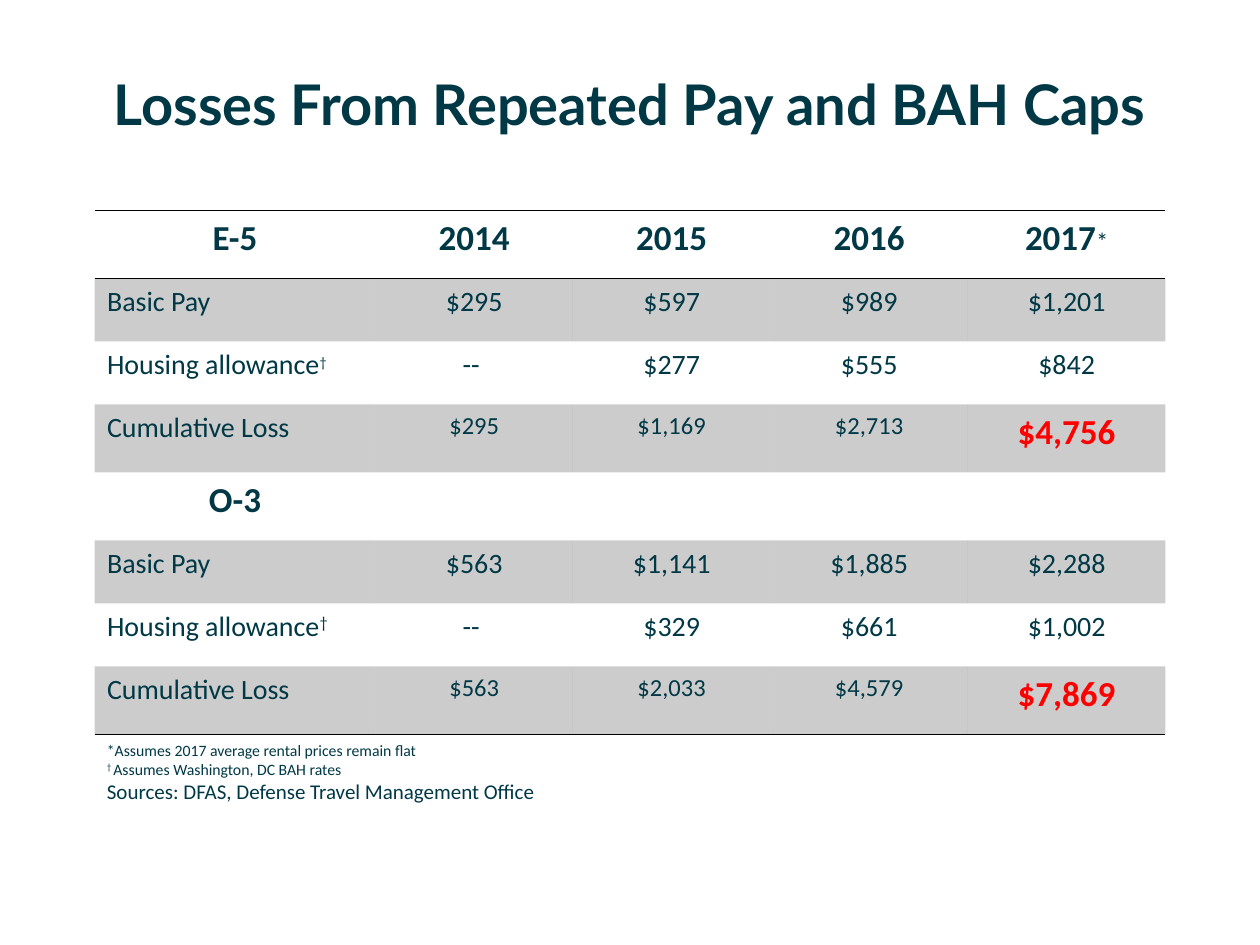
from dataclasses import dataclass

from pptx import Presentation
from pptx.dml.color import RGBColor
from pptx.enum.text import MSO_ANCHOR, PP_ALIGN
from pptx.oxml.ns import qn
from pptx.util import Inches, Pt
from lxml.etree import SubElement


@dataclass(frozen=True)
class Theme:
    title_font: str = "Lato"
    body_font: str = "Calibri"
    ink: str = "003846"
    loss: str = "FF0000"
    rule: str = "000000"
    band_opacity: int = 20
    title: int = 32
    heading: int = 20
    body: int = 16
    small: int = 14
    source: int = 12
    note: int = 9


THEME = Theme()
LEFT, WIDTH = 0.75, 8.5
LABEL_WIDTH = 2.23
TALL_ROW, ROW = 0.54, 0.5
NO_STYLE = "{2D5ABB26-0587-4C30-8999-92F81FD0307C}"

YEARS = ["2014", "2015", "2016", "2017"]
# Grade, dagger size, then pay, housing and cumulative losses by year
GRADES = [
    ("E-5", THEME.small,
     ["$295", "$597", "$989", "$1,201"],
     ["-- ", "$277", "$555", "$842"],
     ["$295", "$1,169", "$2,713", "$4,756"]),
    ("O-3", THEME.body,
     ["$563", "$1,141", "$1,885", "$2,288"],
     ["-- ", "$329", "$661", "$1,002"],
     ["$563", "$2,033", "$4,579", "$7,869"]),
]


def add_run(paragraph, text, size, bold=False, color=THEME.ink,
            font=THEME.body_font, raised=False):
    run = paragraph.add_run()
    run.text = text
    run.font.size = Pt(size)
    run.font.bold = bold
    run.font.name = font
    run.font.color.rgb = RGBColor.from_string(color)
    if raised:
        run.font._element.set("baseline", "30000")


def add_text_box(slide, top, height):
    frame = slide.shapes.add_textbox(
        Inches(LEFT), Inches(top), Inches(WIDTH), Inches(height)).text_frame
    frame.word_wrap = True
    return frame


def shade(cell):
    cell.fill.solid()
    cell.fill.fore_color.rgb = RGBColor.from_string(THEME.rule)
    color = cell._tc.tcPr.find(".//" + qn("a:srgbClr"))
    SubElement(color, qn("a:alpha"), val=str(THEME.band_opacity * 1000))


def add_rules(cell, *edges):
    properties = cell._tc.get_or_add_tcPr()
    for position, edge in enumerate(edges):
        line = SubElement(properties, qn(f"a:{edge}"), w=str(Pt(1)))
        fill = SubElement(line, qn("a:solidFill"))
        SubElement(fill, qn("a:srgbClr"), val=THEME.rule)
        properties.insert(position, line)  # borders precede the fill


def fill_row(table, row, label, values, size, label_size=THEME.body,
             bold=False, dagger=0):
    """Write a row label with its optional dagger, then the centred values."""
    heading = table.cell(row, 0).text_frame.paragraphs[0]
    add_run(heading, label, label_size, bold)
    if bold:
        heading.alignment = PP_ALIGN.CENTER
    if dagger:
        add_run(heading, "†", dagger, raised=True)
    for column, value in enumerate(values, start=1):
        paragraph = table.cell(row, column).text_frame.paragraphs[0]
        paragraph.alignment = PP_ALIGN.CENTER
        total = label == "Cumulative Loss" and column == len(YEARS)
        add_run(paragraph, value, THEME.heading if total else size,
                bold or total, THEME.loss if total else THEME.ink)


def add_losses_table(slide):
    heights = [TALL_ROW, ROW, ROW, TALL_ROW] * len(GRADES)
    table = slide.shapes.add_table(
        len(heights), len(YEARS) + 1, Inches(LEFT), Inches(1.67),
        Inches(WIDTH), Inches(sum(heights))).table
    table.first_row = table.horz_banding = False
    table._tbl.tblPr.find(qn("a:tableStyleId")).text = NO_STYLE
    for row, height in zip(table.rows, heights):
        row.height = Inches(height)
    table.columns[0].width = Inches(LABEL_WIDTH)
    for column in range(1, len(YEARS) + 1):
        table.columns[column].width = Inches((WIDTH - LABEL_WIDTH) / len(YEARS))

    # Four rows per grade; the years head the first grade only
    for index, (grade, dagger, pay, housing, cumulative) in enumerate(GRADES):
        top = index * 4
        fill_row(table, top, grade, [] if index else YEARS,
                 THEME.heading, THEME.heading, bold=True)
        fill_row(table, top + 1, "Basic Pay", pay, THEME.body)
        fill_row(table, top + 2, "Housing allowance", housing, THEME.body,
                 dagger=dagger)
        fill_row(table, top + 3, "Cumulative Loss", cumulative, THEME.small)
    add_run(table.cell(0, len(YEARS)).text_frame.paragraphs[0], "*", THEME.small)

    # Bands on odd rows, rules around the header and under the last row
    for row in range(len(heights)):
        for column in range(len(YEARS) + 1):
            cell = table.cell(row, column)
            if row % 2:
                shade(cell)
            else:
                cell.fill.background()
            if row == 0:
                add_rules(cell, "lnT", "lnB")
            elif row == len(heights) - 1:
                add_rules(cell, "lnB")


def add_title(slide):
    frame = add_text_box(slide, 0.49, 0.66)
    frame.vertical_anchor = MSO_ANCHOR.MIDDLE
    paragraph = frame.paragraphs[0]
    paragraph.alignment = PP_ALIGN.CENTER
    add_run(paragraph, "Losses From Repeated Pay and BAH Caps", THEME.title,
            bold=True, font=THEME.title_font)


def add_footnotes(slide):
    frame = add_text_box(slide, 5.83, 0.61)
    notes = frame.paragraphs[0]
    add_run(notes, "*Assumes 2017 average rental prices remain flat", THEME.note)
    notes.add_line_break()
    line_break = notes._p.find(qn("a:br"))
    SubElement(line_break, qn("a:rPr"), sz=str(THEME.note * 100))
    add_run(notes, "† ", THEME.note, raised=True)
    add_run(notes, "Assumes Washington, DC BAH rates", THEME.note)
    add_run(frame.add_paragraph(),
            "Sources: DFAS, Defense Travel Management Office", THEME.source)


def main():
    deck = Presentation()
    deck.slide_width, deck.slide_height = Inches(10), Inches(7.5)
    slide = deck.slides.add_slide(deck.slide_layouts[6])
    add_losses_table(slide)
    add_title(slide)
    add_footnotes(slide)
    deck.save("out.pptx")


if __name__ == "__main__":
    main()
